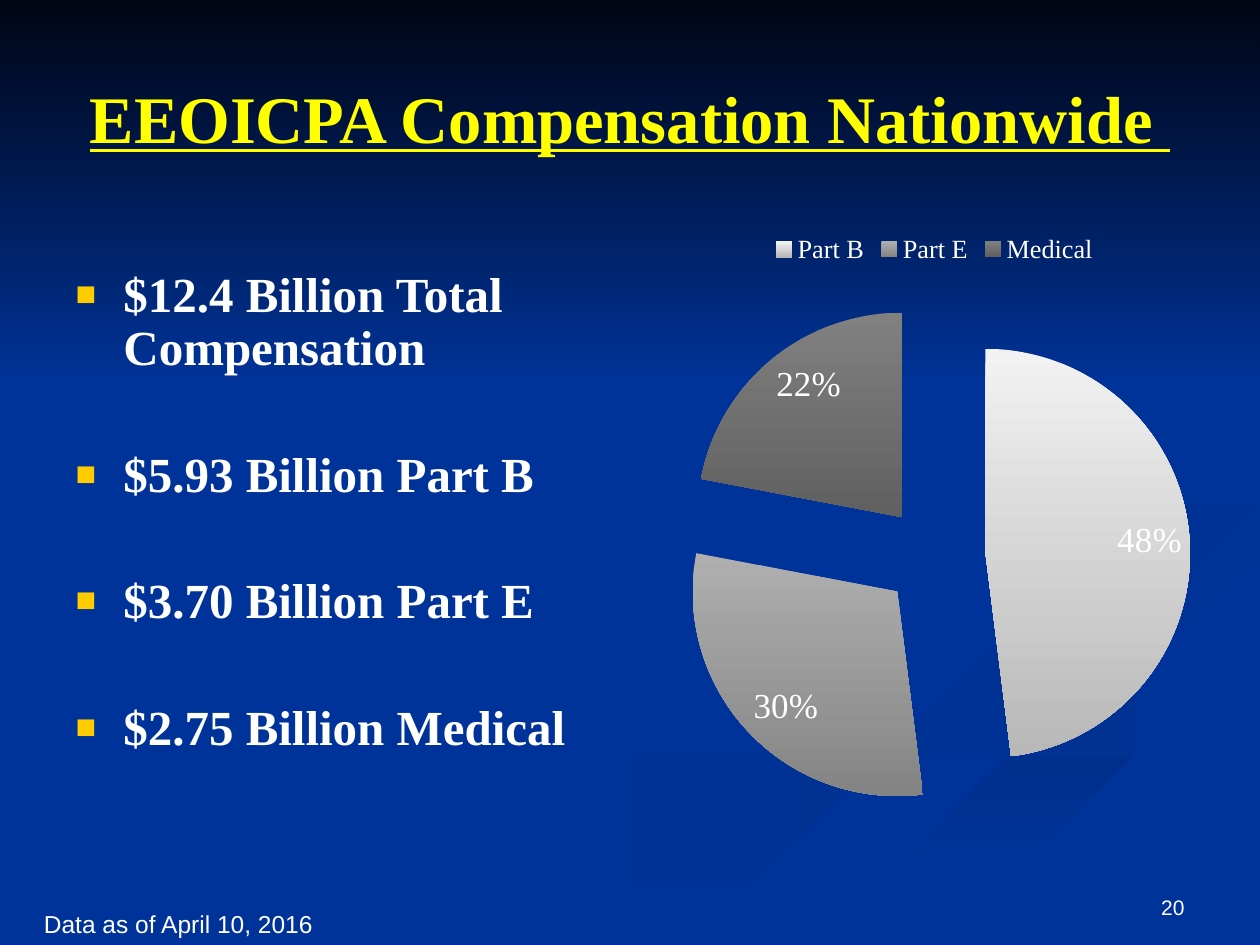
from lxml.etree import SubElement
from pptx import Presentation
from pptx.chart.data import CategoryChartData
from pptx.dml.color import RGBColor
from pptx.enum.chart import XL_CHART_TYPE as ChartType, XL_LABEL_POSITION as LabelAt, XL_LEGEND_POSITION as LegendAt
from pptx.enum.shapes import MSO_SHAPE as Preset
from pptx.enum.text import MSO_ANCHOR as Anchor, MSO_AUTO_SIZE as AutoSize, PP_ALIGN as Align
from pptx.oxml.ns import qn
from pptx.util import Inches, Pt

WIDTH, HEIGHT = Inches(10), Inches(7.5)
COLUMNS, ROWS = 120, 90
STEPS = 6
SERIF, SANS = "Times New Roman", "Arial"
WHITE = RGBColor(0xFF, 0xFF, 0xFF)
YELLOW = RGBColor(0xFF, 0xFF, 0x00)
GOLD = RGBColor(0xFF, 0xCC, 0x00)
BLUE = RGBColor(0x00, 0x33, 0x99)
NIGHT = RGBColor(0x00, 0x05, 0x14)
DEEP = RGBColor(0x00, 0x2F, 0x8D)
DUSK = RGBColor(0x00, 0x31, 0x93)

SLICES = [
    ("Part B", 48, RGBColor(0xF2, 0xF2, 0xF2), RGBColor(0xB8, 0xB8, 0xB8)),
    ("Part E", 30, RGBColor(0xAF, 0xAF, 0xAF), RGBColor(0x84, 0x84, 0x84)),
    ("Medical", 22, RGBColor(0x80, 0x80, 0x80), RGBColor(0x60, 0x60, 0x60)),
]
AMOUNTS = ["$12.4 Billion Total Compensation", "$5.93 Billion Part B",
           "$3.70 Billion Part E", "$2.75 Billion Medical"]

WAVES = [
    (BLUE, DUSK, 0,
     [(5.75, 4.6), (6.3, 5.04), (7.5, 5.4), (8, 5.8), (6.8, 6.33), (3.6, 7.49)],
     [(3, 7.49), (5.4, 6.5), (7.5, 5.94), (7.8, 5.55), (6.3, 5.05), (5.72, 4.7)]),
    (BLUE, DUSK, 45,
     [(7.24, 4.64), (7.6, 4.98), (8.9, 5.35), (9.43, 5.7), (8.94, 6.05)],
     [(9.17, 5.8), (8.8, 5.49), (7.66, 5.12), (7.24, 4.7)]),
    (DEEP, BLUE, 90,
     [(5.03, 7.49), (6.3, 6.93), (8, 6.37), (9.98, 5.81)],
     [(9.98, 6.09), (7.85, 6.61), (6.5, 7.1), (5.71, 7.49)]),
    (DEEP, BLUE, 45,
     [(8.26, 4.96), (7.81, 4.63), (8.5, 4.27), (9.98, 4.02)],
     [(9.98, 4.2), (8.8, 4.39), (8.05, 4.72), (8.26, 4.96)]),
    (DEEP, BLUE, 45,
     [(7.62, 2.33), (8.7, 2.95), (8.7, 3.82), (6.83, 4.3), (5.93, 4.7), (6.22, 5)],
     [(5.77, 4.62), (6.5, 4.2), (8.3, 3.82), (8.89, 3.35), (7.62, 2.33)]),
]


def grid(column, row, columns, rows):
    """Turn a grid position into left, top, width and height."""
    return (int(column * WIDTH / COLUMNS), int(row * HEIGHT / ROWS),
            int(columns * WIDTH / COLUMNS), int(rows * HEIGHT / ROWS))


def bend(knots):
    """Return points on a Catmull-Rom curve through the knots."""
    padded = [knots[0], *knots, knots[-1]]
    curve = []
    for a, b, c, d in zip(padded, padded[1:], padded[2:], padded[3:]):
        for step in range(STEPS):
            t = step / STEPS
            curve.append(tuple(
                q + t / 2 * (r - p + t * (2 * p - 5 * q + 4 * r - s + t * (3 * (q - r) + s - p)))
                for p, q, r, s in zip(a, b, c, d)))
    return curve + [knots[-1]]


def shade(fill, start, end, angle):
    """Fill with a linear gradient at a clockwise angle."""
    fill.gradient()
    fill.gradient_angle = (360 - angle) % 360
    for stop, color in zip(fill.gradient_stops, (start, end)):
        stop.color.rgb = color


def paint(shape, start, end, angle):
    """Give a shape a gradient without line or shadow."""
    shade(shape.fill, start, end, angle)
    shape.line.fill.background()
    shape.shadow.inherit = False


def style(font, face, size, color=WHITE, bold=False, underline=False):
    """Apply one character format."""
    font.name, font.size, font.bold, font.underline = face, Pt(size), bold, underline
    font.color.rgb = color


def write(shape, lines, align=Align.LEFT, anchor=Anchor.TOP, **font):
    """Write formatted paragraphs into a shape and return them."""
    frame = shape.text_frame
    frame.word_wrap, frame.auto_size, frame.vertical_anchor = True, AutoSize.NONE, anchor
    frame.text = "\n".join(lines)
    for paragraph in frame.paragraphs:
        paragraph.alignment = align
        style(paragraph.runs[0].font, **font)
    return frame.paragraphs


def move(shape, box):
    """Place a shape in a box."""
    shape.left, shape.top, shape.width, shape.height = box


def backdrop(slide, box):
    """Lay the waves and the dark upper band behind everything else."""
    left, top, width, height = box
    slide.background.fill.solid()
    slide.background.fill.fore_color.rgb = BLUE
    group = slide.shapes.add_group_shape()
    for start, end, angle, outward, homeward in WAVES:
        edge = bend(outward) + bend(homeward)
        outline = group.shapes.build_freeform(*edge[0], scale=width / 10)
        outline.add_line_segments(edge[1:], close=True)
        paint(outline.convert_to_shape(left, top), start, end, angle)
    band = group.shapes.add_shape(Preset.RECTANGLE, left, top, width, int(height * 0.41))
    paint(band, NIGHT, BLUE, 90)
    slide.shapes._spTree.insert(2, group._element)


def heading(slide, box):
    """Fill the title placeholder."""
    move(slide.shapes.title, box)
    write(slide.shapes.title, ["EEOICPA Compensation Nationwide "], Align.CENTER, Anchor.MIDDLE,
          face=SERIF, size=38, color=YELLOW, bold=True, underline=True)


def amounts(slide, box):
    """Fill the body placeholder with the bulleted sums."""
    body = slide.placeholders[1]
    move(body, box)
    body.text_frame.margin_top = int(box[3] * 0.08)
    for index, paragraph in enumerate(write(body, AMOUNTS, face=SERIF, size=28, bold=True)):
        paragraph.line_spacing = 0.9
        paragraph.space_before = Pt(42 if index else 0)
        properties = paragraph._p.get_or_add_pPr()
        properties.set("marL", str(Inches(0.38)))
        properties.set("indent", str(-Inches(0.38)))
        SubElement(SubElement(properties, qn("a:buClr")), qn("a:srgbClr"), val=str(GOLD))
        SubElement(properties, qn("a:buSzPct"), val="70000")
        SubElement(properties, qn("a:buFont"), typeface=SANS)
        SubElement(properties, qn("a:buChar"), char="■")


def shares(slide, box):
    """Draw the exploded pie of compensation shares."""
    data = CategoryChartData()
    data.categories = [name for name, *_ in SLICES]
    data.add_series("Series 1", [value for _, value, *_ in SLICES])
    chart = slide.shapes.add_chart(ChartType.PIE, *box, data).chart
    style(chart.font, SERIF, 10)
    chart.has_title = False
    chart.has_legend = True
    chart.legend.position = LegendAt.TOP
    chart.legend.include_in_layout = False
    style(chart.legend.font, SERIF, 15)
    plot = chart.plots[0]
    plot.vary_by_categories = True
    pie = plot.series[0]
    explosion = SubElement(pie._element, qn("c:explosion"), val="25")
    pie._element.find(qn("c:tx")).addnext(explosion)
    for index, (_, _, light, dark) in enumerate(SLICES):
        piece = pie.points[index].format
        shade(piece.fill, light, dark, 90)
        piece.line.fill.background()
    labels = pie.data_labels
    labels.show_percentage, labels.show_value = True, False
    labels.number_format, labels.number_format_is_linked = "0%", False
    labels.position = LabelAt.INSIDE_END
    style(labels.font, SERIF, 20)


def footer(slide, note_box, number_box):
    """Write the date note and the page number."""
    write(slide.shapes.add_textbox(*note_box), ["Data as of April 10, 2016"], face=SANS, size=14)
    write(slide.shapes.add_textbox(*number_box), ["20"], Align.RIGHT, Anchor.BOTTOM, face=SANS, size=12)


def main():
    """Build the slide and save it."""
    deck = Presentation()
    deck.slide_width, deck.slide_height = WIDTH, HEIGHT
    slide = deck.slides.add_slide(deck.slide_layouts[1])
    backdrop(slide, grid(0, 0, COLUMNS, ROWS))
    heading(slide, grid(6, 3.6, 108, 15))
    amounts(slide, grid(6, 21, 53, 59.4))
    shares(slide, grid(63, 21, 52, 59.4))
    footer(slide, grid(3, 86, 48, 4), grid(86, 82, 28, 6.2))
    deck.save("out.pptx")


if __name__ == "__main__":
    main()
